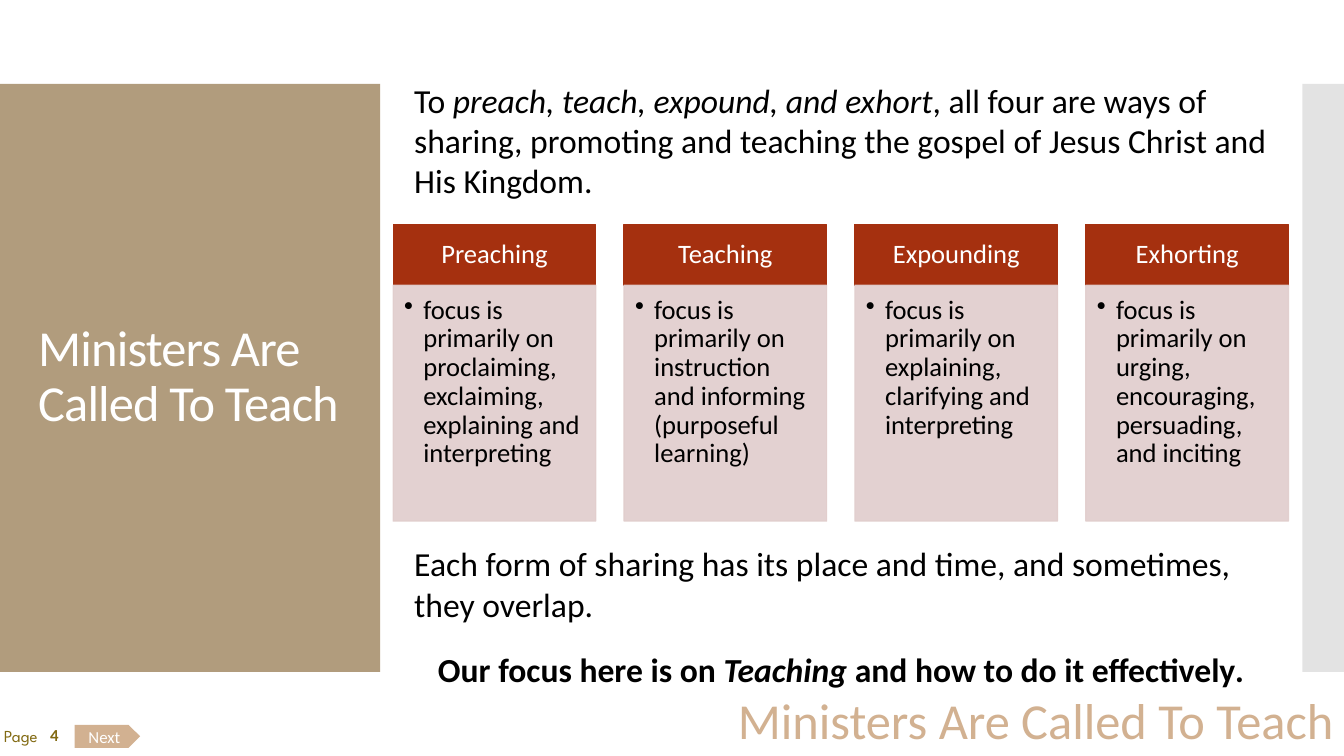
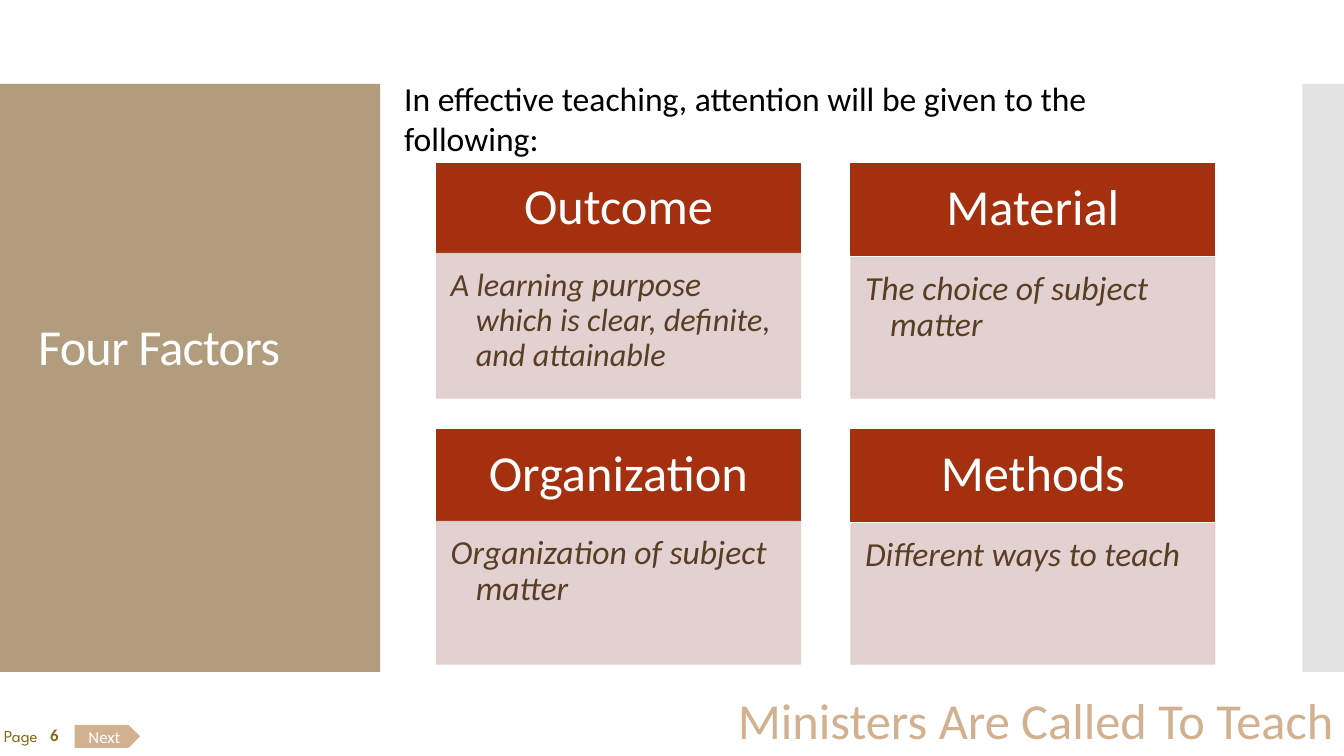
import pptx
import pptx.util
import pptx.dml.color
import pptx.enum.shapes
import pptx.enum.text
import pptx.oxml
import pptx.oxml.ns

Pt, Inches = pptx.util.Pt, pptx.util.Inches
SHAPE = pptx.enum.shapes.MSO_SHAPE
ALIGN = pptx.enum.text.PP_ALIGN
ANCHOR = pptx.enum.text.MSO_ANCHOR
qn = pptx.oxml.ns.qn

WIDTH, HEIGHT = Inches(13.33), Inches(7.5)
FONT = "Calibri"
COLORS = {
    "panel": "B19C7D",
    "strip": "C8C8C8",
    "tan": "D2B191",
    "gold": "826A12",
    "rust": "A5300F",
    "blush": "E1CDCC",
    "brown": "593E24",
    "white": "FFFFFF",
    "black": "000000",
}


def rgb(name):
    return pptx.dml.color.RGBColor.from_string(COLORS[name])


def place(x, y, w, h):
    """Turn percentages of the slide's width and height into lengths."""
    return [round(share * side / 100)
            for share, side in zip((x, y, w, h), (WIDTH, HEIGHT) * 2)]


def add_paragraph(tf, runs, size, color, first=True, align=ALIGN.LEFT,
                  spacing=None, after=0, font=FONT, **style):
    """Write runs, each a string or a (string, font settings) pair."""
    p = tf.paragraphs[0] if first else tf.add_paragraph()
    p.alignment, p.space_after = align, Pt(after)
    if spacing:
        p.line_spacing = spacing
    for run in [runs] if isinstance(runs, str) else runs:
        text, own = (run, {}) if isinstance(run, str) else run
        r = p.add_run()
        r.text = text
        r.font.name, r.font.size = font, Pt(size)
        r.font.color.rgb = rgb(color)
        for key, value in {**style, **own}.items():
            setattr(r.font, key, value)
    return p


def hang(p, indent, bullet=None):
    """Give a paragraph a hanging indent, with or without a bullet."""
    pPr = p._p.get_or_add_pPr()
    pPr.set("marL", str(Inches(indent)))
    pPr.set("indent", str(-Inches(indent)))
    if bullet:
        pPr.append(pptx.oxml.parse_xml(
            f'<a:buChar {pptx.oxml.ns.nsdecls("a")} char="{bullet}"/>'))


def set_insets(tf, left, top, right, bottom):
    tf.margin_left, tf.margin_top = Inches(left), Inches(top)
    tf.margin_right, tf.margin_bottom = Inches(right), Inches(bottom)


def add_text(s, box, anchor=ANCHOR.TOP, wrap=True):
    tf = s.shapes.add_textbox(*place(*box)).text_frame
    tf.word_wrap, tf.vertical_anchor = wrap, anchor
    return tf


def add_block(s, box, color, kind=SHAPE.RECTANGLE, alpha=None, outline=False,
              anchor=ANCHOR.MIDDLE):
    sp = s.shapes.add_shape(kind, *place(*box))
    sp.shadow.inherit = False
    sp.fill.solid()
    sp.fill.fore_color.rgb = rgb(color)
    if outline:
        sp.line.color.rgb = rgb(color)
        sp.line.width = Pt(0.85)
    else:
        sp.line.fill.background()
    if alpha:
        for clr in sp._element.spPr.iter(qn("a:srgbClr")):
            pptx.oxml.parse_xml  # colour elements take an alpha child
            clr.append(clr.makeelement(qn("a:alpha"), {"val": str(alpha * 1000)}))
    tf = sp.text_frame
    tf.word_wrap, tf.vertical_anchor = True, anchor
    return tf


def add_card(s, box, head, title, runs, look, seam=0):
    """Draw a coloured heading of height head above a pale body."""
    x, y, w, h = box
    tf = add_block(s, (x, y, w, head), "rust", outline=True)
    set_insets(tf, *look["head_insets"])
    add_paragraph(tf, title, look["head_size"], "white",
                  align=ALIGN.CENTER, spacing=0.9)
    top = head + seam
    tf = add_block(s, (x, y + top, w, h - top), "blush", alpha=90,
                   outline=True, anchor=ANCHOR.TOP)
    set_insets(tf, *look["insets"])
    p = add_paragraph(tf, runs, look["size"], look["color"], spacing=0.9,
                      italic=look["italic"])
    hang(p, look["indent"], look["bullet"])


def add_frame(prs, title, number, lift=0):
    """Start a slide with the side bands, title and footer."""
    s = prs.slides.add_slide(prs.slide_layouts[6])
    add_block(s, (0, 11.11, 28.28, 77.78), "panel")
    add_block(s, (96.9, 11.11, 3.1, 77.78), "strip", alpha=50)
    tf = add_text(s, (50.48, 90.53, 49.5, 9.47))
    add_paragraph(tf, "Ministers Are Called To Teach", 36, "tan",
                  align=ALIGN.RIGHT)
    tf = add_text(s, (-0.45, 95.33, 4.8, 4), wrap=False)
    add_paragraph(tf, "Page", 12, "gold", font="League Spartan")
    tf = add_text(s, (3, 94.93, 4.88, 4.67), ANCHOR.MIDDLE)
    add_paragraph(tf, number, 12, "gold", bold=True)
    tf = add_block(s, (5.55, 95.87, 4.88, 3.07), "tan", SHAPE.PENTAGON)
    add_paragraph(tf, "Next", 12, "white", align=ALIGN.CENTER)
    tf = add_text(s, (2.1, 16.4 - lift, 24.15, 67.07), ANCHOR.MIDDLE)
    p = add_paragraph(tf, title, 36, "white", spacing=0.9)
    for r in p.runs:
        r._r.get_or_add_rPr().set("spc", "-60")
    return s


def add_ministers_slide(prs):
    s = add_frame(prs, "Ministers Are Called To Teach", "4")
    look = {"head_size": 19, "head_insets": (0.15, 0.08, 0.15, 0.08),
            "size": 19, "insets": (0.11, 0.11, 0.15, 0.17), "color": "black",
            "italic": False, "indent": 0.19, "bullet": "•"}
    cards = [
        ("Preaching", "proclaiming, exclaiming, explaining and interpreting"),
        ("Teaching", "instruction and informing (purposeful learning)"),
        ("Expounding", "explaining, clarifying and interpreting"),
        ("Exhorting", "urging, encouraging, persuading, and inciting"),
    ]
    for col, (title, focus) in enumerate(cards):
        add_card(s, (29.25 + col * 17.18, 29.73, 15.08, 39.2), 8, title,
                 "focus is primarily on " + focus, look)
    tf = add_text(s, (30.08, 9.87, 65.03, 18))
    add_paragraph(tf, [
        "To ", ("preach, teach, expound, and exhort", {"italic": True}),
        ", all four are ways of sharing, promoting and teaching the gospel "
        "of Jesus Christ and His Kingdom."], 24, "black")
    tf = add_text(s, (30.08, 71.2, 65.03, 21.4))
    add_paragraph(tf, "Each form of sharing has its place and time, and "
                  "sometimes, they overlap.", 24, "black", after=18)
    add_paragraph(tf, [
        "Our focus here is on ", ("Teaching ", {"italic": True}),
        "and how to do it effectively", (".", {"italic": True})],
        24, "black", first=False, align=ALIGN.CENTER, bold=True)


def add_factors_slide(prs):
    s = add_frame(prs, "Four Factors", "6", lift=3.8)
    tf = add_text(s, (29.33, 9.6, 62.55, 12))
    add_paragraph(tf, "In effective teaching, attention will be given to the "
                  "following:", 24, "black")
    look = {"head_size": 36, "head_insets": (0.28, 0.16, 0.28, 0.16),
            "size": 24, "insets": (0.14, 0.14, 0.19, 0.21), "color": "brown",
            "italic": True, "indent": 0.25, "bullet": None}
    smaller = {"size": Pt(23)}
    purpose = [("A learning ", smaller), "purpose",
               (" which is clear, definite, and attainable", smaller)]
    cards = [
        ("Outcome", purpose, 11.87),
        ("Material", "The choice of subject matter", 12.13),
        ("Organization", "Organization of subject matter", 12.13),
        ("Methods", "Different ways to teach", 12.13),
    ]
    for i, (title, runs, head) in enumerate(cards):
        row, col = divmod(i, 2)
        add_card(s, (32.48 + col * 30.83, 21.65 + row * 35.2, 27.08, 31),
                 head, title, runs, look, seam=col * 0.27)


def main():
    prs = pptx.Presentation()
    prs.slide_width, prs.slide_height = WIDTH, HEIGHT
    add_ministers_slide(prs)
    add_factors_slide(prs)
    prs.save("out.pptx")


if __name__ == "__main__":
    main()
